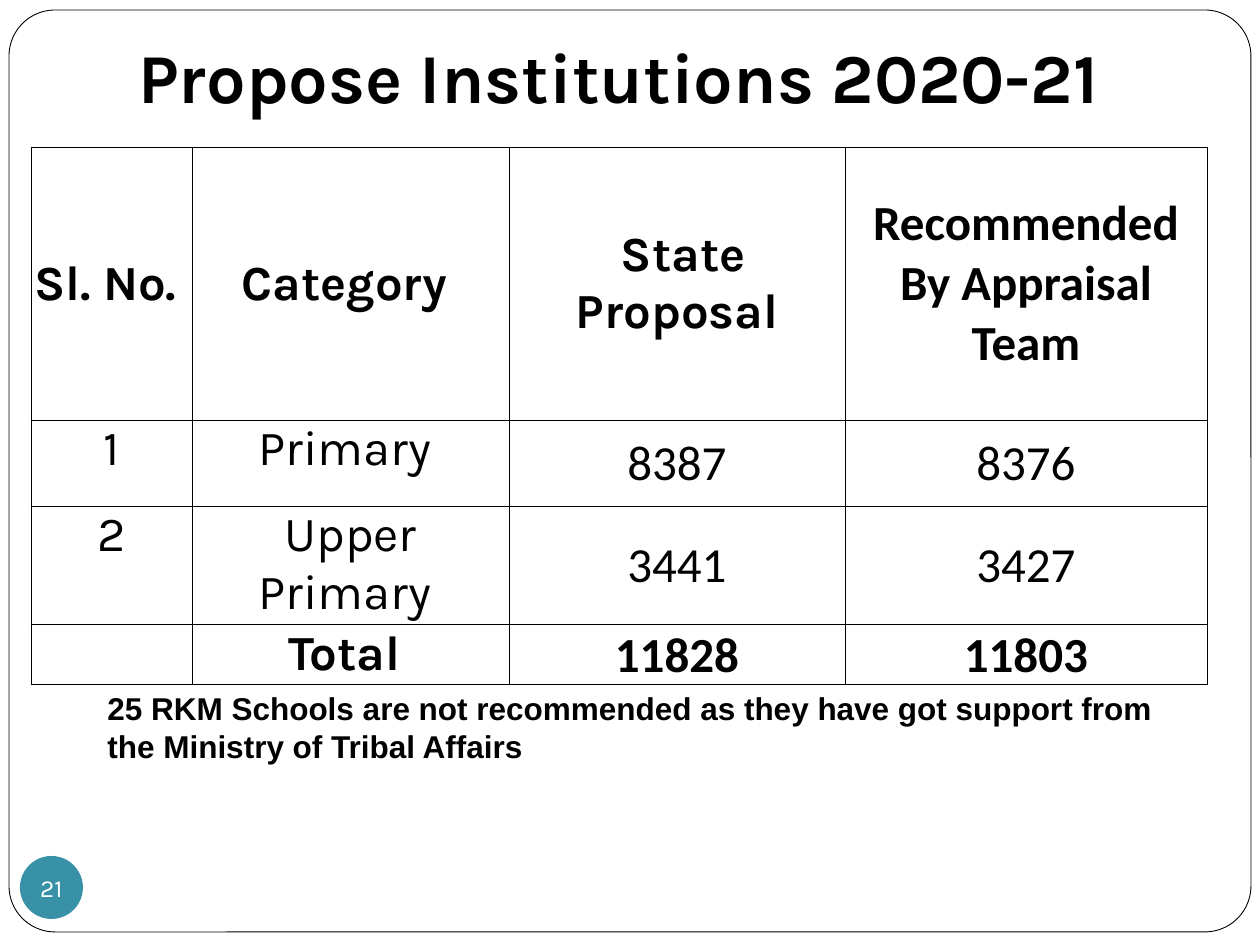
"""Build the slide of institutions proposed for 2020-21."""
import pptx
import pptx.dml.color
import pptx.enum.shapes
import pptx.enum.text
import pptx.oxml
import pptx.oxml.ns
import pptx.util

PX = 914400 // 126
BLACK = pptx.dml.color.RGBColor(0x00, 0x00, 0x00)
WHITE = pptx.dml.color.RGBColor(0xFF, 0xFF, 0xFF)
TEAL = pptx.dml.color.RGBColor(0x38, 0x91, 0xA7)
SHAPE = pptx.enum.shapes.MSO_SHAPE
ANCHOR = pptx.enum.text.MSO_ANCHOR
CENTER = pptx.enum.text.PP_ALIGN.CENTER


def px(*lengths):
    return [n * PX for n in lengths]


def write(tf, text, font, size, color=BLACK, bold=False, align=None):
    tf.text = text
    p = tf.paragraphs[0]
    p.alignment = align
    for r in p.runs:
        r.font.name = font
        r.font.size = pptx.util.Pt(size)
        r.font.bold = bold
        r.font.color.rgb = color


prs = pptx.Presentation()
prs.slide_width = pptx.util.Inches(10)
prs.slide_height = pptx.util.Inches(7.5)
s = prs.slides.add_slide(prs.slide_layouts[6])

frame = s.shapes.add_shape(SHAPE.ROUNDED_RECTANGLE, *px(9, 10, 1242, 922))
frame.adjustments[0] = 0.05
frame.shadow.inherit = False
frame.fill.solid()
frame.fill.fore_color.rgb = WHITE
frame.line.color.rgb = BLACK
frame.line.width = pptx.util.Pt(0.5)

title = s.shapes.add_textbox(*px(126, 0, 1071, 130))
tf = title.text_frame
tf.word_wrap = True
tf.vertical_anchor = ANCHOR.BOTTOM
tf.margin_bottom = pptx.util.Inches(0.1)
write(tf, "Propose Institutions 2020-21", "Karla", 40, bold=True)

badge = s.shapes.add_shape(SHAPE.OVAL, *px(20, 856, 63, 63))
badge.shadow.inherit = False
badge.fill.solid()
badge.fill.fore_color.rgb = TEAL
badge.line.fill.background()
tf = badge.text_frame
tf.word_wrap = False
tf.vertical_anchor = ANCHOR.MIDDLE
tf.margin_left = tf.margin_right = tf.margin_top = tf.margin_bottom = 0
write(tf, "21", "Karla", 14, WHITE, align=CENTER)

ROWS = [
    ["Sl. No. ", "Category ", " State Proposal", "Recommended By Appraisal Team"],
    ["1", "Primary ", "8387", "8376"],
    ["2", "Upper Primary ", "3441", "3427"],
    ["", "Total ", "11828", "11803"],
]
table = s.shapes.add_table(4, 4, *px(31, 147, 1176, 500)).table
table.first_row = table.horz_banding = False
for column, width in zip(table.columns, px(161, 317, 336, 362)):
    column.width = width
for row, height in zip(table.rows, px(273, 86, 82, 30)):
    row.height = height

for i, texts in enumerate(ROWS):
    for j, text in enumerate(texts):
        cell = table.cell(i, j)
        cell.margin_left = cell.margin_right = cell.margin_top = PX
        cell.margin_bottom = 0
        cell.vertical_anchor = ANCHOR.MIDDLE if i == 0 or j > 1 else ANCHOR.TOP
        font = "Calibri" if j == 3 or (i > 0 and j == 2) else "Karla"
        write(cell.text_frame, text, font, 28, bold=i in (0, 3), align=CENTER)
        tcPr = cell._tc.get_or_add_tcPr()
        for side in ("lnL", "lnR", "lnT", "lnB"):
            tcPr.append(pptx.oxml.parse_xml(
                f'<a:{side} {pptx.oxml.ns.nsdecls("a")} w="6350"><a:solidFill>'
                f'<a:srgbClr val="{BLACK}"/></a:solidFill></a:{side}>'))
        cell.fill.background()

note = s.shapes.add_textbox(*px(95, 683, 1081, 89))
tf = note.text_frame
tf.word_wrap = True
tf.auto_size = pptx.enum.text.MSO_AUTO_SIZE.SHAPE_TO_FIT_TEXT
write(tf, "25 RKM Schools are not recommended as they have got support from "
      "the Ministry of Tribal Affairs", "Arial", 18, bold=True)

prs.save("out.pptx")
